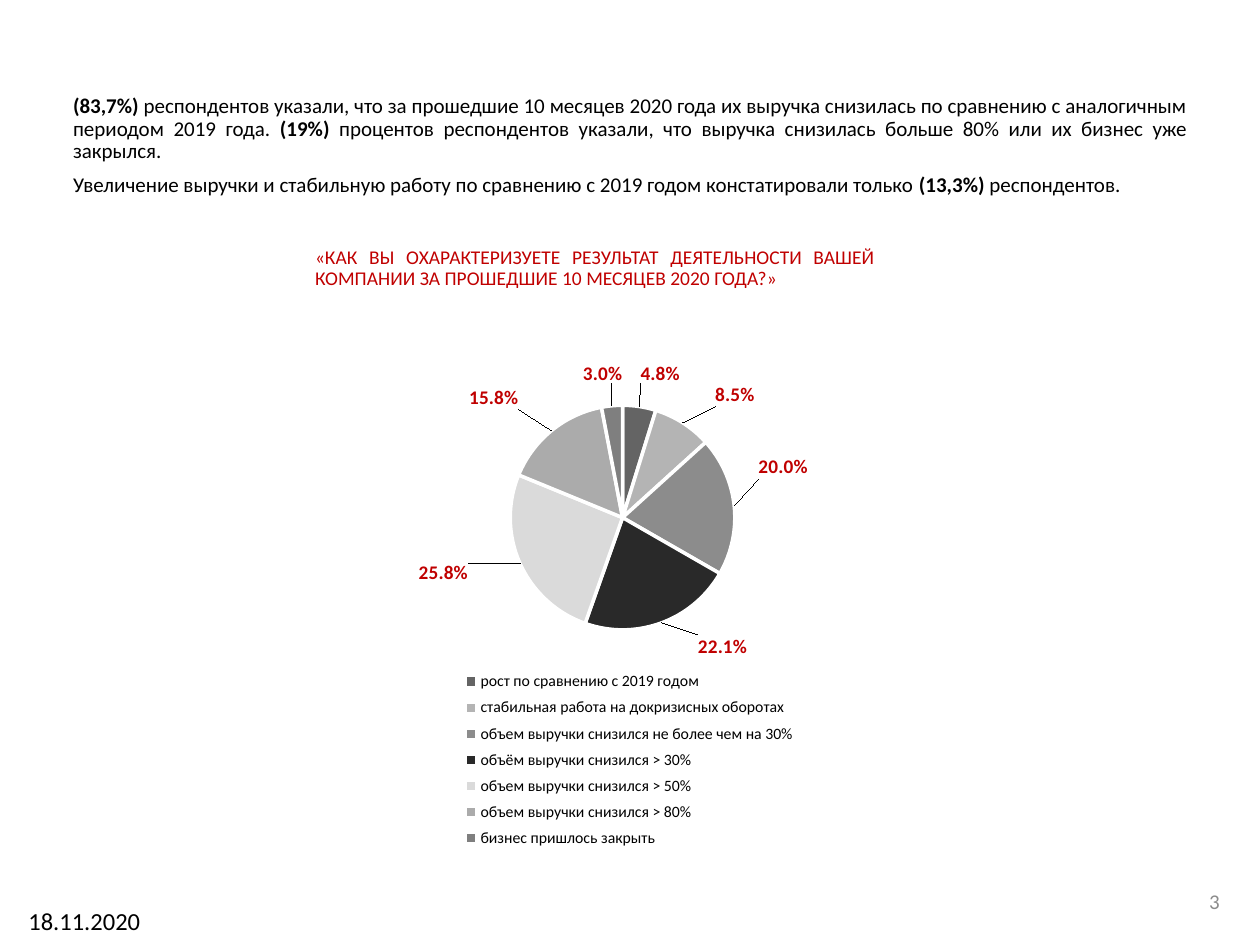
from lxml import etree
from pptx import Presentation
from pptx.chart.data import CategoryChartData
from pptx.dml.color import RGBColor
from pptx.enum.chart import XL_CHART_TYPE, XL_LABEL_POSITION, XL_LEGEND_POSITION
from pptx.enum.text import MSO_ANCHOR, PP_ALIGN
from pptx.oxml.ns import qn
from pptx.util import Inches, Pt

PIE = XL_CHART_TYPE.PIE
OUT = XL_LABEL_POSITION.OUTSIDE_END
BELOW = XL_LEGEND_POSITION.BOTTOM
TOP, MIDDLE, BOTTOM = MSO_ANCHOR.TOP, MSO_ANCHOR.MIDDLE, MSO_ANCHOR.BOTTOM
JUSTIFY, RIGHT, CENTER = PP_ALIGN.JUSTIFY, PP_ALIGN.RIGHT, PP_ALIGN.CENTER

BLACK = RGBColor(0, 0, 0)
WHITE = RGBColor(255, 255, 255)
RED = RGBColor(0xC0, 0, 0)
GRAY = RGBColor(0x8C, 0x8C, 0x8C)
FACE = "Calibri"

SUMMARY = [
    [("(83,7%) ", True),
     ("респондентов указали, что за прошедшие 10 месяцев 2020 года их выручка "
      "снизилась по сравнению с аналогичным периодом 2019 года. ", False),
     ("(19%) ", True),
     ("процентов респондентов указали, что выручка снизилась больше 80% "
      "или их бизнес уже закрылся.", False)],
    [("Увеличение выручки и стабильную работу по сравнению с 2019 годом "
      "констатировали только ", False),
     ("(13,3%) ", True),
     ("респондентов.", False)],
]
QUESTION = [[("«КАК ВЫ ОХАРАКТЕРИЗУЕТЕ РЕЗУЛЬТАТ ДЕЯТЕЛЬНОСТИ ВАШЕЙ "
              "КОМПАНИИ ЗА ПРОШЕДШИЕ 10 МЕСЯЦЕВ 2020 ГОДА?»", False)]]

# name, share, colour, label shift
SLICES = [
    ("рост по сравнению с 2019 годом", 0.048, "646464", (0, -0.03)),
    ("стабильная работа на докризисных оборотах", 0.085, "B4B4B4", (0.05, -0.02)),
    ("объем выручки снизился не более чем на 30%", 0.2, "8C8C8C", (0.03, -0.05)),
    ("объём выручки снизился > 30%", 0.221, "292929", (0.06, 0.01)),
    ("объем выручки снизился > 50%", 0.258, "DADADA", (-0.08, -0.01)),
    ("объем выручки снизился > 80%", 0.158, "ABABAB", (-0.05, -0.03)),
    ("бизнес пришлось закрыть", 0.03, "7F7F7F", (0.02, -0.03)),
]


def style(font, size, color, bold=False):
    font.name, font.size, font.bold = FACE, Pt(size), bold
    font.color.rgb = color


def fill_body(shape, box, paras, size, color, anchor, after=0):
    shape.left, shape.top, shape.width, shape.height = map(Inches, box)
    frame = shape.text_frame
    frame.vertical_anchor = anchor
    for i, parts in enumerate(paras):
        para = frame.add_paragraph() if i else frame.paragraphs[0]
        para.alignment = JUSTIFY
        para.line_spacing = 0.9
        para.space_before, para.space_after = Pt(0), Pt(after)
        for text, bold in parts:
            run = para.add_run()
            run.text = text
            style(run.font, size, color, bold)


def add_note(slide, box, text, size, color, align, anchor):
    frame = slide.shapes.add_textbox(*map(Inches, box)).text_frame
    frame.word_wrap = True
    frame.vertical_anchor = anchor
    para = frame.paragraphs[0]
    para.text = text
    para.alignment = align
    style(para.font, size, color)


def set_layout(node, after, **values):
    for old in node.findall(qn("c:layout")):
        node.remove(old)
    layout = etree.Element(qn("c:layout"))
    manual = etree.SubElement(layout, qn("c:manualLayout"))
    for key, value in values.items():
        etree.SubElement(manual, qn("c:" + key)).set("val", str(value))
    if after is None:
        node.insert(0, layout)
    else:
        node.find(qn(after)).addnext(layout)


def add_pie(slide, box):
    data = CategoryChartData(number_format="0.0%")
    data.categories = [name for name, *_ in SLICES]
    data.add_series("Series 1", [share for _, share, *_ in SLICES])
    chart = slide.shapes.add_chart(PIE, *map(Inches, box), data).chart
    chart.has_title = False
    style(chart.font, 10, BLACK)
    plot = chart.plots[0]
    plot.vary_by_categories = True

    chart.has_legend = True
    legend = chart.legend
    legend.position = BELOW
    legend.include_in_layout = False
    style(legend.font, 9, BLACK)

    series = plot.series[0]
    labels = series.data_labels
    labels.show_value = True
    labels.number_format = "0.0%"
    labels.number_format_is_linked = False
    labels.position = OUT
    style(labels.font, 11, RED, True)
    for i, (_, _, color, _) in enumerate(SLICES):
        point = series.points[i]
        point.format.fill.solid()
        point.format.fill.fore_color.rgb = RGBColor.from_string(color)
        point.format.line.color.rgb = WHITE
        point.format.line.width = Pt(2)
        label = point.data_label
        style(label.font, 11, RED, True)
        label.position = OUT

    root = chart.element
    for node, (*_, (x, y)) in zip(root.iter(qn("c:dLbl")), SLICES):
        set_layout(node, "c:idx", x=x, y=y)
    frame = {"xMode": "edge", "yMode": "edge"}
    set_layout(next(root.iter(qn("c:plotArea"))), None, layoutTarget="inner",
               **frame, x=0.094, y=0.085, w=0.788, h=0.437)
    set_layout(next(root.iter(qn("c:legend"))), "c:legendPos",
               **frame, x=0.17, y=0.59, w=0.66, h=0.37)


def main():
    deck = Presentation()
    deck.slide_width, deck.slide_height = Inches(10), Inches(7.5)
    slide = deck.slides.add_slide(deck.slide_layouts[4])
    holders = {s.placeholder_format.idx: s for s in slide.placeholders}
    fill_body(holders.pop(1), (0.48, 0.54, 9.05, 1.07), SUMMARY, 12, BLACK,
              BOTTOM, 6)
    fill_body(holders.pop(3), (2.4, 1.92, 4.64, 0.56), QUESTION, 11.1, RED, TOP)
    for spare in holders.values():
        spare.element.getparent().remove(spare.element)
    add_note(slide, (7.45, 6.95, 2.33, 0.4), "3", 12, GRAY, RIGHT, MIDDLE)
    add_pie(slide, (2.76, 2.87, 4.47, 4.08))
    add_note(slide, (0, 7.14, 1.34, 0.36), "18.11.2020", 14, BLACK, CENTER, TOP)
    deck.save("out.pptx")


if __name__ == "__main__":
    main()
